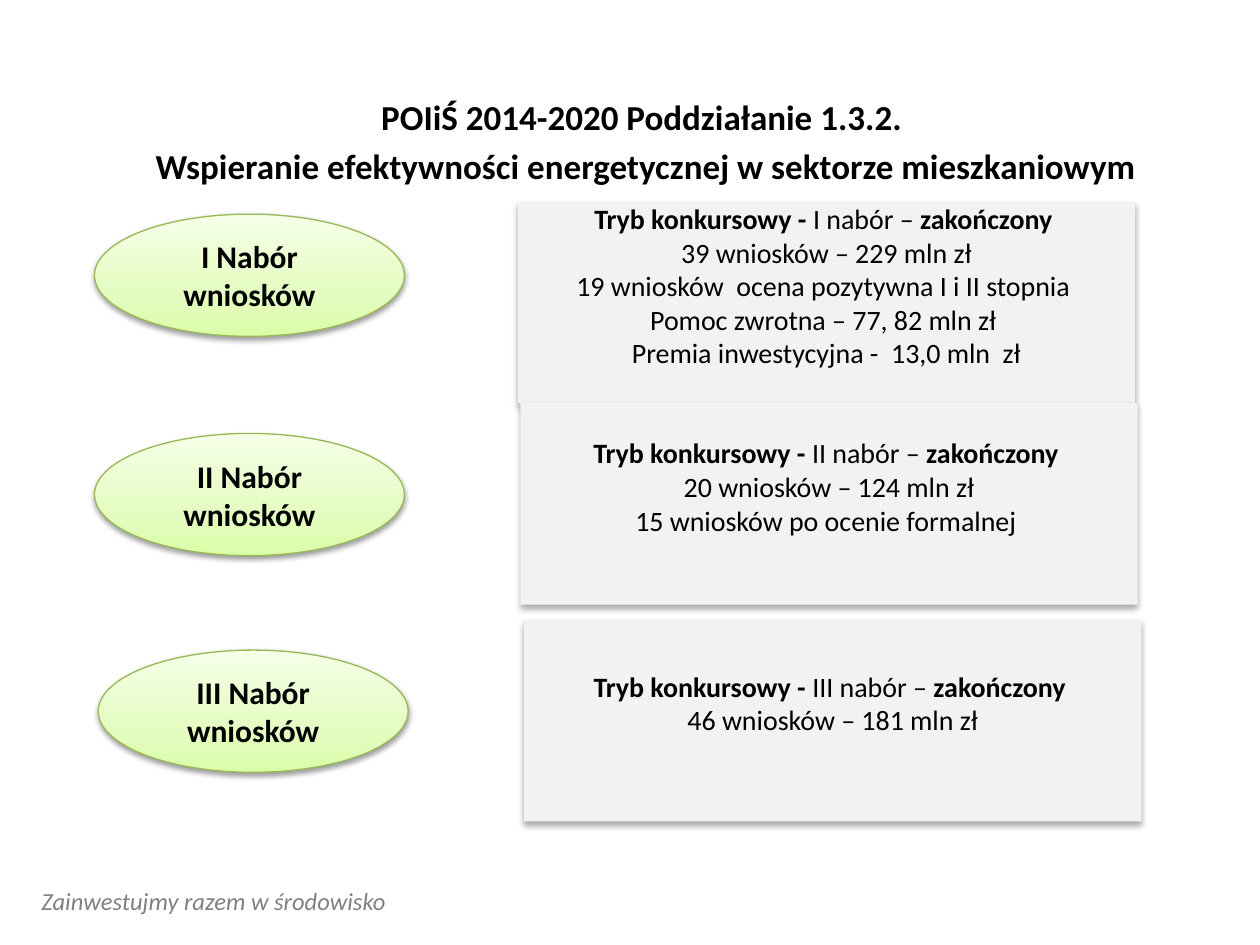
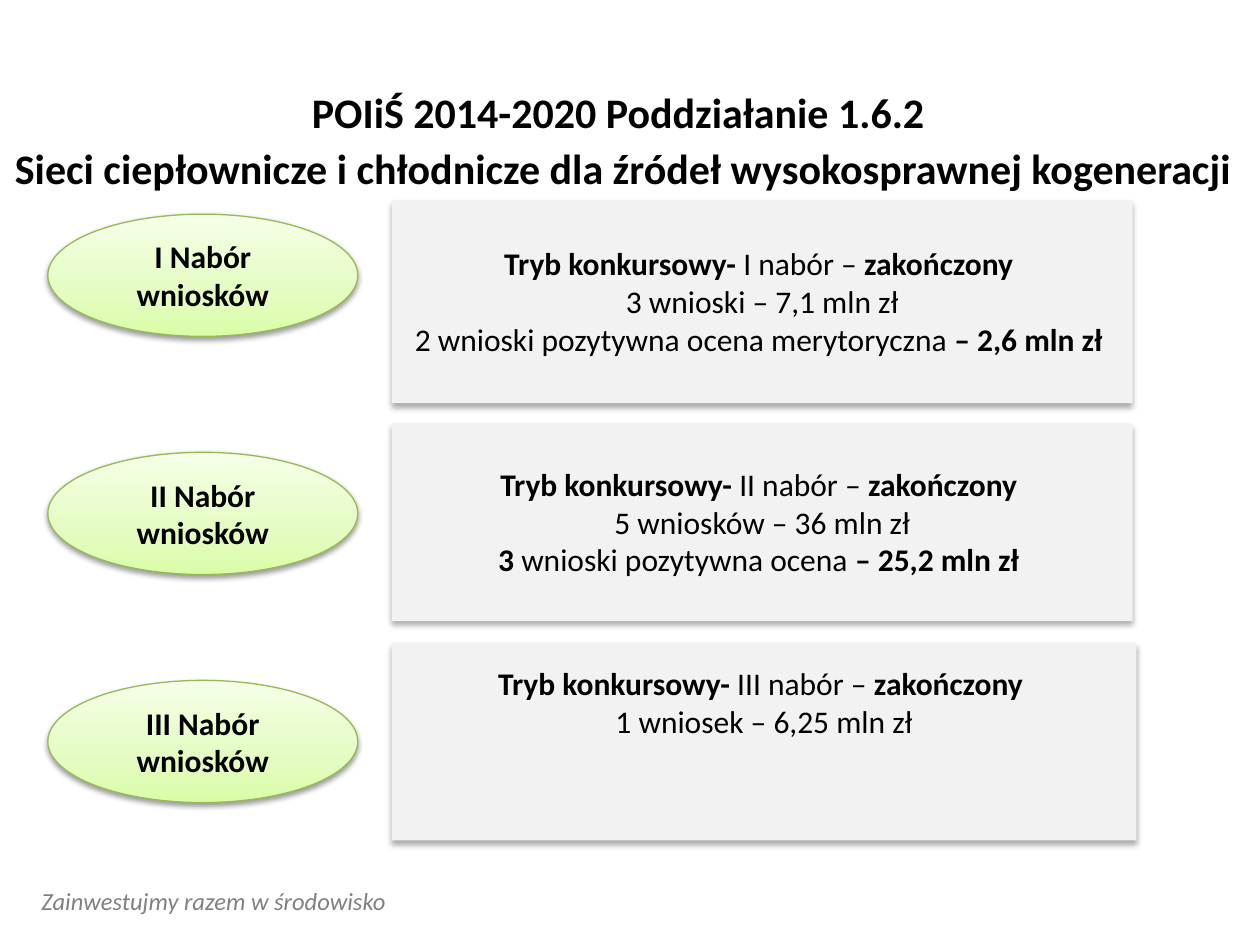
import pptx
import pptx.util
import pptx.dml.color
import pptx.enum.shapes
import pptx.enum.text
import pptx.oxml.ns
import lxml.etree
from dataclasses import dataclass

Inches = pptx.util.Inches
Pt = pptx.util.Pt
RGBColor = pptx.dml.color.RGBColor
ShapeType = pptx.enum.shapes.MSO_SHAPE
Anchor = pptx.enum.text.MSO_ANCHOR
Align = pptx.enum.text.PP_ALIGN
qn = pptx.oxml.ns.qn


@dataclass(frozen=True)
class Theme:
    font: str = "Calibri"
    text: str = "000000"
    footer: str = "808080"
    panel: str = "F2F2F2"
    outline: str = "98B955"
    gradient: tuple = ((0, "DAFDA7"), (35, "E4FCC2"), (100, "F5FFE7"))
    footer_size: int = 14
    label_size: int = 18


theme = Theme()


def write_paragraphs(text_frame, paragraphs, size, color=theme.text, alignment=Align.CENTER):
    """Write paragraphs, each a list of (text, bold) runs."""
    text_frame.word_wrap = True
    for index, runs in enumerate(paragraphs):
        paragraph = text_frame.paragraphs[0] if index == 0 else text_frame.add_paragraph()
        paragraph.alignment = alignment
        for text, bold in runs:
            run = paragraph.add_run()
            run.text = text
            run.font.name = theme.font
            run.font.size = Pt(size)
            run.font.bold = bold
            run.font.color.rgb = RGBColor.from_string(color)


def add_shadowed_shape(slide, kind, box, opacity, blur, distance):
    """Add a preset shape with a soft shadow straight below it."""
    shape = slide.shapes.add_shape(kind, *[Inches(length) for length in box])
    shape.shadow.inherit = False
    effects = shape._element.spPr.find(qn("a:effectLst"))
    shadow = lxml.etree.SubElement(
        effects, qn("a:outerShdw"), blurRad=str(Pt(blur)), dist=str(Pt(distance)),
        dir="5400000", rotWithShape="0")
    color = lxml.etree.SubElement(shadow, qn("a:srgbClr"), val="000000")
    lxml.etree.SubElement(color, qn("a:alpha"), val=str(opacity * 1000))
    return shape


# Each call: label position, panel box, top inset of the panel text, detail lines
slides = [
    {
        "title": ["POIiŚ 2014-2020 Poddziałanie 1.3.2. ",
                  "Wspieranie efektywności energetycznej w sektorze mieszkaniowym"],
        "title_box": (0.28, 0.75, 9.69, 0.79),
        "title_size": 20,
        "mode": "Tryb konkursowy - ",
        "detail_size": 16,
        "calls": [
            ((0.75, 1.7), (4.11, 1.6, 4.9, 1.6), 0,
             [[("39 wniosków – 229 mln zł", False)],
              [("19 wniosków  ocena pozytywna I i II stopnia ", False)],
              [("Pomoc zwrotna – 77, 82 mln zł ", False)],
              [("Premia inwestycyjna -  13,0 mln  zł", False)]]),
            ((0.75, 3.44), (4.13, 3.2, 4.9, 1.6), 0.26,
             [[("20 wniosków – 124 mln zł", False)],
              [("15 wniosków po ocenie formalnej ", False)]]),
            ((0.78, 5.16), (4.16, 4.92, 4.9, 1.6), 0.39,
             [[("46 wniosków – 181 mln zł", False)]]),
        ],
    },
    {
        "title": ["POIiŚ 2014-2020 Poddziałanie 1.6.2 ",
                  "Sieci ciepłownicze i chłodnicze dla źródeł wysokosprawnej kogeneracji "],
        "title_box": (0, 0.68, 9.89, 0.91),
        "title_size": 24,
        "mode": "Tryb konkursowy- ",
        "detail_size": 18,
        "calls": [
            ((0.38, 1.7), (3.11, 1.59, 5.88, 1.61), 0.35,
             [[("3 wnioski – 7,1 mln zł", False)],
              [("2 wnioski pozytywna ocena merytoryczna ", False), ("– 2,6 mln zł ", True)]]),
            ((0.38, 3.59), (3.11, 3.36, 5.88, 1.57), 0.33,
             [[("5 wniosków – 36 mln zł", False)],
              [("3 ", True), ("wnioski pozytywna ocena ", False), ("– 25,2 mln zł ", True)]]),
            ((0.38, 5.4), (3.11, 5.1, 5.91, 1.57), 0.17,
             [[("1 wniosek – 6,25 mln zł", False)]]),
        ],
    },
]

presentation = pptx.Presentation()
presentation.slide_width = Inches(10)
presentation.slide_height = Inches(7.5)

for content in slides:
    slide = presentation.slides.add_slide(presentation.slide_layouts[6])

    # Footer
    footer = slide.shapes.add_textbox(Inches(0.23), Inches(6.98), Inches(4.22), Inches(0.34))
    write_paragraphs(footer.text_frame, [[("Zainwestujmy razem w środowisko", False)]],
                     theme.footer_size, theme.footer, Align.LEFT)
    footer.text_frame.paragraphs[0].runs[0].font.italic = True

    # Title
    title = slide.shapes.add_textbox(*[Inches(length) for length in content["title_box"]])
    write_paragraphs(title.text_frame, [[(line, True)] for line in content["title"]],
                     content["title_size"])
    for paragraph in title.text_frame.paragraphs:
        paragraph.line_spacing = 0.9
        paragraph.space_after = Pt(6)

    for numeral, call in zip(("I", "II", "III"), content["calls"]):
        label_position, panel_box, top_inset, details = call

        # Panel with the results of the call
        panel = add_shadowed_shape(slide, ShapeType.RECTANGLE, panel_box, 32, 3.5, 2.2)
        panel.fill.solid()
        panel.fill.fore_color.rgb = RGBColor.from_string(theme.panel)
        panel.line.fill.background()
        panel.text_frame.vertical_anchor = Anchor.TOP
        panel.text_frame.margin_top = Inches(top_inset)
        heading = [(content["mode"], True), (f"{numeral} nabór – ", False), ("zakończony ", True)]
        write_paragraphs(panel.text_frame, [heading] + details, content["detail_size"])

        # Oval label with the number of the call
        label = add_shadowed_shape(slide, ShapeType.OVAL, (*label_position, 2.46, 0.97),
                                   38, 3.1, 1.6)
        label.fill.gradient()
        label.fill.gradient_angle = 90
        stops = label._element.spPr.find(".//" + qn("a:gsLst"))
        for stop in list(stops):
            stops.remove(stop)
        for position, color in theme.gradient:
            stop = lxml.etree.SubElement(stops, qn("a:gs"), pos=str(position * 1000))
            lxml.etree.SubElement(stop, qn("a:srgbClr"), val=color)
        label.line.color.rgb = RGBColor.from_string(theme.outline)
        label.line.width = Pt(0.75)
        label.text_frame.vertical_anchor = Anchor.MIDDLE
        write_paragraphs(label.text_frame, [[(f"{numeral} Nabór wniosków", True)]],
                         theme.label_size)

presentation.save("out.pptx")
